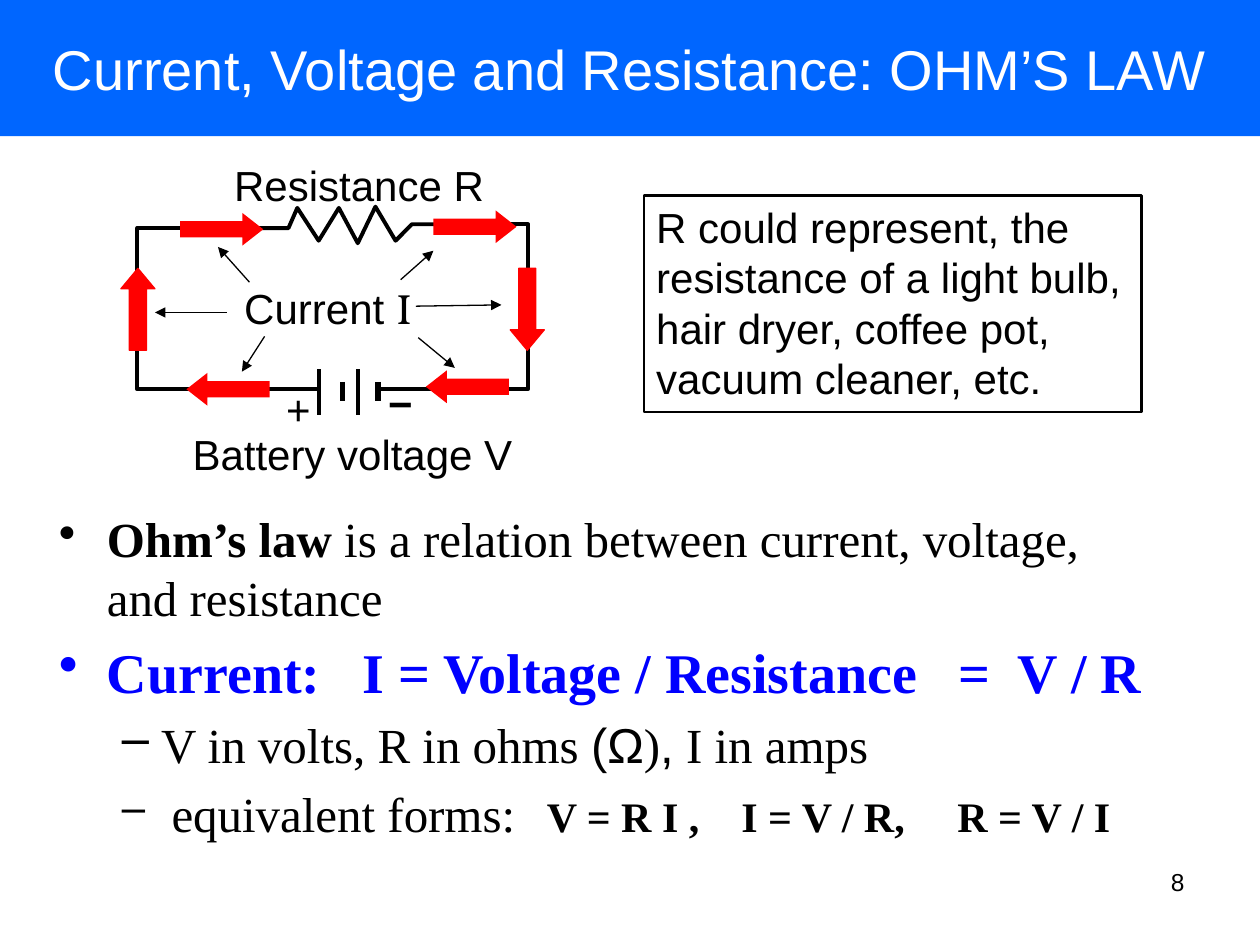
from dataclasses import dataclass
from typing import Optional

import pptx
import pptx.dml.color
import pptx.enum.shapes
import pptx.enum.text
import pptx.oxml.ns
import pptx.util
from lxml import etree

Inches = pptx.util.Inches
Pt = pptx.util.Pt
Shape = pptx.enum.shapes.MSO_SHAPE
Align = pptx.enum.text.PP_ALIGN
Anchor = pptx.enum.text.MSO_ANCHOR
qn = pptx.oxml.ns.qn

BLACK, WHITE, RED, BLUE, BANNER = "000000", "FFFFFF", "FF0000", "0000FF", "0066FF"
SERIF = "Times New Roman"


@dataclass(frozen=True)
class Run:
    text: str
    size: float = 24
    font: str = "Arial"
    color: str = BLACK
    bold: bool = False


@dataclass(frozen=True)
class Para:
    runs: tuple[Run, ...]
    bullet: str = ""
    level: int = 0
    indent: float = 0
    hanging: float = 0
    before: float = 0


@dataclass(frozen=True)
class FlowArrow:
    kind: Shape
    left: float
    top: float


def rgb(value: str) -> pptx.dml.color.RGBColor:
    return pptx.dml.color.RGBColor.from_string(value)


def add_text(slide, box: tuple, paras: list[Para], *, align=Align.LEFT,
             anchor=Anchor.TOP, wrap: bool = True, inset: tuple = (0.1, 0.05),
             fill: Optional[str] = None, outline: Optional[str] = None) -> None:
    holder = slide.shapes.add_textbox(*map(Inches, box))
    if fill:
        holder.fill.solid()
        holder.fill.fore_color.rgb = rgb(fill)
    if outline:
        holder.line.color.rgb = rgb(outline)
        holder.line.width = Pt(1.5)
    frame = holder.text_frame
    frame.word_wrap = wrap
    frame.vertical_anchor = anchor
    frame.margin_left = frame.margin_right = Inches(inset[0])
    frame.margin_top = frame.margin_bottom = Inches(inset[1])
    for index, para in enumerate(paras):
        paragraph = frame.add_paragraph() if index else frame.paragraphs[0]
        paragraph.alignment = align
        paragraph.level = para.level
        paragraph.space_before = Pt(para.before)
        if para.bullet:
            properties = paragraph._p.get_or_add_pPr()
            properties.set("marL", str(Inches(para.indent)))
            properties.set("indent", str(-Inches(para.hanging)))
            etree.SubElement(properties, qn("a:buChar")).set("char", para.bullet)
        for part in para.runs:
            for number, line in enumerate(part.text.split("\n")):
                if number:
                    paragraph.add_line_break()
                run = paragraph.add_run()
                run.text = line
                run.font.size = Pt(part.size)
                run.font.name = part.font
                run.font.bold = part.bold
                run.font.color.rgb = rgb(part.color)


def add_wire(slide, points: list[tuple]) -> None:
    builder = slide.shapes.build_freeform(
        *(Inches(value) for value in points[0]), scale=1.0)
    builder.add_line_segments(
        [(Inches(x), Inches(y)) for x, y in points[1:]], close=False)
    wire = builder.convert_to_shape()
    wire.shadow.inherit = False
    wire.fill.background()
    wire.line.color.rgb = rgb(BLACK)
    wire.line.width = Pt(2.25)


def add_line(slide, start: tuple, end: tuple, width: float, arrow: bool = False) -> None:
    line = slide.shapes.add_connector(
        pptx.enum.shapes.MSO_CONNECTOR.STRAIGHT, *map(Inches, start + end))
    line.line.color.rgb = rgb(BLACK)
    line.line.width = Pt(width)
    if arrow:
        etree.SubElement(line.line._get_or_add_ln(), qn("a:tailEnd")).set("type", "triangle")
    etree.SubElement(line._element.spPr, qn("a:effectLst"))


def add_flow_arrow(slide, flow: FlowArrow) -> None:
    vertical = flow.kind in (Shape.UP_ARROW, Shape.DOWN_ARROW)
    size = (0.27, 0.65) if vertical else (0.66, 0.26)
    arrow = slide.shapes.add_shape(flow.kind, *map(Inches, (flow.left, flow.top) + size))
    arrow.shadow.inherit = False
    arrow.adjustments[1] = 0.6 if vertical else 0.64
    arrow.fill.solid()
    arrow.fill.fore_color.rgb = rgb(RED)
    if vertical:
        arrow.line.color.rgb = rgb(RED)
        arrow.line.width = Pt(0.75)
    else:
        arrow.line.fill.background()


def add_circuit(slide) -> None:
    resistor = [(2.01, 1.81), (2.29, 1.81), (2.36, 1.65), (2.53, 1.91), (2.69, 1.65),
                (2.84, 1.93), (2.98, 1.64), (3.14, 1.91), (3.27, 1.78), (3.55, 1.78)]
    left_wire = [(2.06, 1.81), (1.09, 1.81), (1.09, 3.09), (2.54, 3.09)]
    right_wire = [(3.49, 1.78), (4.19, 1.78), (4.19, 3.09), (3, 3.09)]
    for wire in (resistor, left_wire, right_wire):
        add_wire(slide, wire)
    for x in (2.53, 2.84):
        add_line(slide, (x, 2.93), (x, 3.29), 2.25)
    for x in (2.72, 3):
        add_line(slide, (x, 3.03), (x, 3.18), 3)

    for flow in (FlowArrow(Shape.UP_ARROW, 0.96, 2.13),
                 FlowArrow(Shape.DOWN_ARROW, 4.05, 2.13),
                 FlowArrow(Shape.LEFT_ARROW, 1.48, 2.96),
                 FlowArrow(Shape.LEFT_ARROW, 3.38, 2.94),
                 FlowArrow(Shape.RIGHT_ARROW, 1.43, 1.69),
                 FlowArrow(Shape.RIGHT_ARROW, 3.44, 1.67)):
        add_flow_arrow(slide, flow)

    for start, end in (((1.98, 2.24), (1.73, 1.96)), ((3.18, 2.22), (3.44, 1.99)),
                       ((1.8, 2.48), (1.23, 2.48)), ((3.3, 2.43), (3.98, 2.42)),
                       ((2.1, 2.67), (1.92, 2.95)), ((3.32, 2.68), (3.61, 2.92))):
        add_line(slide, start, end, 0.75, arrow=True)

    for box, runs in (((1.76, 1.22, 2.19, 0.5), (Run("Resistance R"),)),
                      ((1.43, 3.35, 2.74, 0.5), (Run("Battery voltage V"),)),
                      ((1.84, 2.19, 1.53, 0.5),
                       (Run("Current"), Run(" I", font="TeX Gyre Bonum")))):
        add_text(slide, box, [Para(runs)], wrap=False)
    for left, top, sign in ((2.27, 3.04, Run("+")), (3.08, 3, Run("−", bold=True))):
        add_text(slide, (left, top, 0.18, 0.4), [Para((sign,))], inset=(0, 0))


def main() -> None:
    deck = pptx.Presentation()
    deck.slide_width, deck.slide_height = Inches(10), Inches(7.5)
    slide = deck.slides.add_slide(deck.slide_layouts[6])

    title = Run("Current, Voltage and Resistance: OHM’S LAW", 32, color=WHITE)
    add_text(slide, (0, 0, 10, 1.08), [Para((title,))],
             align=Align.CENTER, anchor=Anchor.MIDDLE, fill=BANNER)

    main_point = dict(bullet="•", indent=0.38, hanging=0.38)
    sub_point = dict(bullet="–", level=1, indent=0.81, hanging=0.31, before=5.6)
    add_text(slide, (0.37, 3.99, 9.33, 3.02), [
        Para((Run("Ohm’s law", 28, SERIF, bold=True),
              Run(" is a relation between current, voltage, \nand resistance", 28, SERIF)),
             before=5.6, **main_point),
        Para((Run("Current:   I = Voltage / Resistance   =  V / R", 32, SERIF, BLUE, True),),
             before=6.4, **main_point),
        Para((Run("V in volts, R in ohms ", 28, SERIF), Run("(Ω", 28), Run(")", 28, SERIF),
              Run(",", 28), Run(" I in amps", 28, SERIF)), **sub_point),
        Para((Run(" ", 24, SERIF), Run("equivalent forms:", 28, SERIF), Run("   ", 24, SERIF),
              Run("V = R I ,    I = V / R,     R = V / I", 24, SERIF, bold=True)), **sub_point),
    ])

    add_text(slide, (5.11, 1.55, 3.95, 1.72), [
        Para((Run("R could represent, the resistance of a light bulb,"),)),
        Para((Run("hair dryer, coffee pot, vacuum cleaner, etc."),)),
    ], outline=BLACK)
    add_circuit(slide)
    add_text(slide, (7.17, 6.83, 2.33, 0.52), [Para((Run("8", 14),))], align=Align.RIGHT)
    deck.save("out.pptx")


if __name__ == "__main__":
    main()
